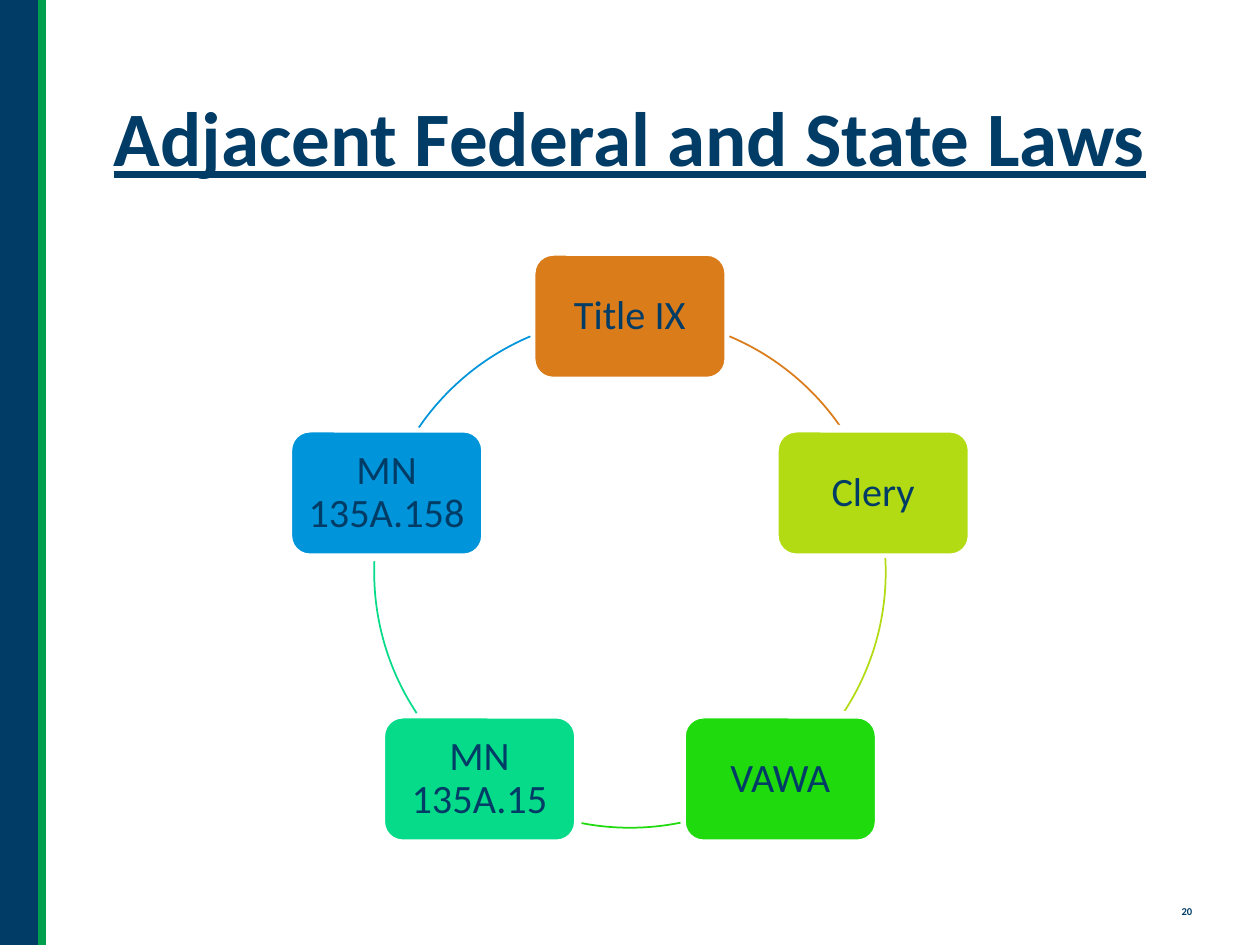
import math
from dataclasses import dataclass

import pptx
import pptx.dml.color
import pptx.enum.shapes
import pptx.enum.text
import pptx.oxml
import pptx.oxml.ns
import pptx.util

Inches = pptx.util.Inches
Pt = pptx.util.Pt
SHAPE = pptx.enum.shapes.MSO_SHAPE


@dataclass(frozen=True)
class Theme:
    font: str = "Calibri"
    navy: str = "003C66"
    green: str = "009F4D"
    white: str = "FFFFFF"
    title_size: float = 44
    law_size: float = 23
    number_size: float = 6


THEME = Theme()

# Law, colour, and the start and end angle of the arc that follows it,
# in degrees clockwise from the right.
LAWS = [
    ("Title IX", "DB7C1B", -67.1, -34.4),
    ("Clery", "B2DB14", -3.1, 33.5),
    ("VAWA", "1FDB0D", 78.6, 101.4),
    ("MN 135A.15", "06DB89", 146.5, 183.1),
    ("MN 135A.158", "0095DA", 214.4, 247.1),
]


def rgb(value):
    return pptx.dml.color.RGBColor.from_string(value)


def write(holder, text, *, size, bold=False, underline=False, spacing=1.0,
          inset=(0.1, 0.05)):
    """Fill a shape with one centred paragraph; inset is (sides, top and bottom)."""
    frame = holder.text_frame
    frame.word_wrap = True
    frame.auto_size = pptx.enum.text.MSO_AUTO_SIZE.NONE
    frame.vertical_anchor = pptx.enum.text.MSO_ANCHOR.MIDDLE
    frame.margin_left = frame.margin_right = Inches(inset[0])
    frame.margin_top = frame.margin_bottom = Inches(inset[1])
    paragraph = frame.paragraphs[0]
    paragraph.alignment = pptx.enum.text.PP_ALIGN.CENTER
    paragraph.line_spacing = spacing
    run = paragraph.add_run()
    run.text = text
    run.font.name = THEME.font
    run.font.size = Pt(size)
    run.font.bold = bold
    run.font.underline = underline
    run.font.color.rgb = rgb(THEME.navy)


def add_shape(slide, preset, box, fill=None, line=None, line_width=1):
    shape = slide.shapes.add_shape(preset, *map(Inches, box))
    shape.shadow.inherit = False
    if fill:
        shape.fill.solid()
        shape.fill.fore_color.rgb = rgb(fill)
    else:
        shape.fill.background()
    if line:
        shape.line.color.rgb = rgb(line)
        shape.line.width = Pt(line_width)
    else:
        shape.line.fill.background()
    return shape


def add_side_band(slide, box):
    left, top, width, height = box
    add_shape(slide, SHAPE.RECTANGLE, box, fill=THEME.navy)
    edge = slide.shapes.add_connector(
        pptx.enum.shapes.MSO_CONNECTOR.STRAIGHT,
        Inches(left + width), Inches(top), Inches(left + width), Inches(top + height))
    edge.line.color.rgb = rgb(THEME.green)
    edge.line.width = Pt(4.5)
    properties = edge._element.spPr
    properties.append(pptx.oxml.parse_xml(
        f"<a:effectLst {pptx.oxml.ns.nsdecls('a')}/>"))


def add_title(slide, box, text):
    title = slide.shapes.title
    title.left, title.top, title.width, title.height = map(Inches, box)
    write(title, text, size=THEME.title_size, bold=True, underline=True, spacing=0.9)


def add_page_number(slide, box, number):
    label = slide.shapes.add_textbox(*map(Inches, box))
    write(label, number, size=THEME.number_size, bold=True)


def add_law_cycle(slide, ring, laws, card_width=1.56, card_height=1.02):
    """Space the laws evenly on the circle in the ring box, starting at its top."""
    left, top, diameter, _ = ring
    radius = diameter / 2
    for index, (law, color, arc_start, arc_end) in enumerate(laws):
        angle = math.radians(360 * index / len(laws) - 90)
        center_x = left + radius + radius * math.cos(angle)
        center_y = top + radius + radius * math.sin(angle)
        card = add_shape(
            slide, SHAPE.ROUNDED_RECTANGLE,
            (center_x - card_width / 2, center_y - card_height / 2,
             card_width, card_height),
            fill=color, line=THEME.white, line_width=4.33)
        # The rounded corners already inset the text area by about 0.05 in.
        write(card, law, size=THEME.law_size, spacing=0.9, inset=(0.06, 0.06))

        arc = add_shape(slide, SHAPE.ARC, ring, line=color)
        for position, degrees in enumerate((arc_start, arc_end)):
            # Angles are stored in 1/60000 degree, adjustments in 1/100000.
            arc.adjustments[position] = degrees % 360 * 0.6


def main():
    deck = pptx.Presentation()
    deck.slide_width, deck.slide_height = Inches(10), Inches(7.5)
    slide = deck.slides.add_slide(deck.slide_layouts.get_by_name("Title Only"))
    add_page_number(slide, (9.17, 7.13, 0.5, 0.2), "20")
    add_side_band(slide, (0, 0, 0.33, 7.5))
    add_title(slide, (0.69, 0.4, 8.62, 1.45), "Adjacent Federal and State Laws")
    add_law_cycle(slide, (2.97, 2.51, 4.06, 4.06), LAWS)
    deck.save("out.pptx")


if __name__ == "__main__":
    main()
